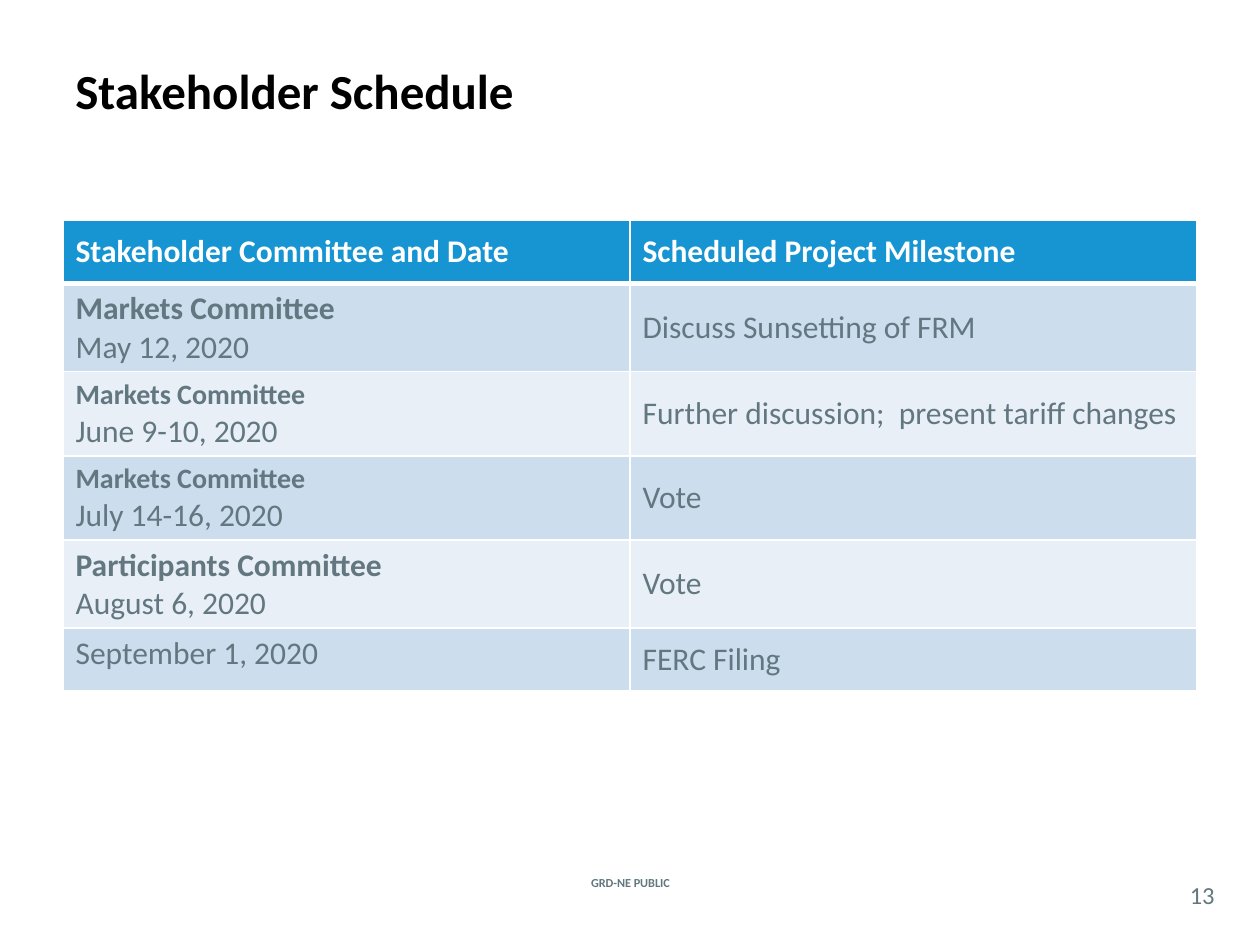
from lxml import etree
from pptx import Presentation
from pptx.dml.color import RGBColor
from pptx.enum.text import MSO_ANCHOR, PP_ALIGN
from pptx.oxml.ns import qn
from pptx.util import Pt

MIDDLE, TOP = MSO_ANCHOR.MIDDLE, MSO_ANCHOR.TOP
LEFT, CENTER = PP_ALIGN.LEFT, PP_ALIGN.CENTER

FONT = "Calibri"
WHITE, BLACK, SLATE = "FFFFFF", "000000", "62777F"
HEADER_BLUE, BAND_DARK, BAND_LIGHT = "1795D2", "CCDDEE", "E8EFF7"

COLUMN_WIDTH = 324
ROW_HEIGHTS = [36, 45, 45, 45, 36, 36]
HEADERS = ["Stakeholder Committee and Date", "Scheduled Project Milestone"]
# Committee, its text size, date, milestone
SCHEDULE = [
    ("Markets Committee", 18, "May 12, 2020", "Discuss Sunsetting of FRM"),
    ("Markets Committee", 16, "June 9-10, 2020",
     "Further discussion;  present tariff changes"),
    ("Markets Committee", 16, "July 14-16, 2020", "Vote"),
    ("Participants Committee", 18, "August 6, 2020", "Vote"),
    (None, None, "September 1, 2020", "FERC Filing"),
]


def color(hex_string):
    return RGBColor.from_string(hex_string)


def write_paragraph(paragraph, text, size, hex_color, bold=False, align=LEFT):
    paragraph.text = text
    paragraph.alignment = align
    font = paragraph.font
    font.name, font.size, font.bold = FONT, Pt(size), bold
    font.color.rgb = color(hex_color)


def add_text(slide, box, text, size, hex_color, bold=False, align=LEFT, inset=None):
    shape = slide.shapes.add_textbox(*(Pt(length) for length in box))
    frame = shape.text_frame
    frame.word_wrap = True
    frame.vertical_anchor = MIDDLE
    if inset is not None:
        frame.margin_left = frame.margin_right = Pt(inset)
        frame.margin_top = frame.margin_bottom = Pt(inset)
    write_paragraph(frame.paragraphs[0], text, size, hex_color, bold, align)


def set_borders(cell, top, bottom):
    properties = cell._tc.get_or_add_tcPr()
    for side, width in (("L", 1), ("R", 1), ("T", top), ("B", bottom)):
        line = etree.SubElement(properties, qn(f"a:ln{side}"), w=str(Pt(width)))
        fill = etree.SubElement(line, qn("a:solidFill"))
        etree.SubElement(fill, qn("a:srgbClr"), val=WHITE)


def fill_cell(cell, lines, fill, hex_color, anchor=MIDDLE, top=1, bottom=1):
    """Each line is (text, size, bold)."""
    set_borders(cell, top, bottom)
    cell.fill.solid()
    cell.fill.fore_color.rgb = color(fill)
    cell.vertical_anchor = anchor
    frame = cell.text_frame
    for index, (text, size, bold) in enumerate(lines):
        paragraph = frame.add_paragraph() if index else frame.paragraphs[0]
        write_paragraph(paragraph, text, size, hex_color, bold)


def add_schedule(slide, left, top):
    table = slide.shapes.add_table(
        len(ROW_HEIGHTS), len(HEADERS), Pt(left), Pt(top),
        Pt(COLUMN_WIDTH * len(HEADERS)), Pt(sum(ROW_HEIGHTS))).table
    for column in table.columns:
        column.width = Pt(COLUMN_WIDTH)
    for row, height in zip(table.rows, ROW_HEIGHTS):
        row.height = Pt(height)

    # Header row, with a heavy rule below it
    for index, header in enumerate(HEADERS):
        fill_cell(table.cell(0, index), [(header, 18, True)],
                  HEADER_BLUE, WHITE, bottom=3)

    # Banded body rows
    for row, (committee, size, date, milestone) in enumerate(SCHEDULE, start=1):
        fill = BAND_DARK if row % 2 else BAND_LIGHT
        rule = 3 if row == 1 else 1
        lines = [(committee, size, True)] if committee else []
        lines.append((date, 18, False))
        fill_cell(table.cell(row, 0), lines, fill, SLATE, TOP, top=rule)
        fill_cell(table.cell(row, 1), [(milestone, 18, False)], fill, SLATE, top=rule)


def main():
    presentation = Presentation()
    presentation.slide_width, presentation.slide_height = Pt(720), Pt(540)
    slide = presentation.slides.add_slide(presentation.slide_layouts[6])

    # Footer label, title and page number
    add_text(slide, (307.5, 498, 105.5, 12.5), "GRD-NE PUBLIC", 7, SLATE, True, CENTER)
    add_text(slide, (36, 30.5, 648, 42), "Stakeholder Schedule", 28, BLACK, True)
    add_text(slide, (672, 501, 30, 21), "13", 14, SLATE, align=CENTER, inset=0)

    add_schedule(slide, 36, 126)
    presentation.save("out.pptx")


if __name__ == "__main__":
    main()
